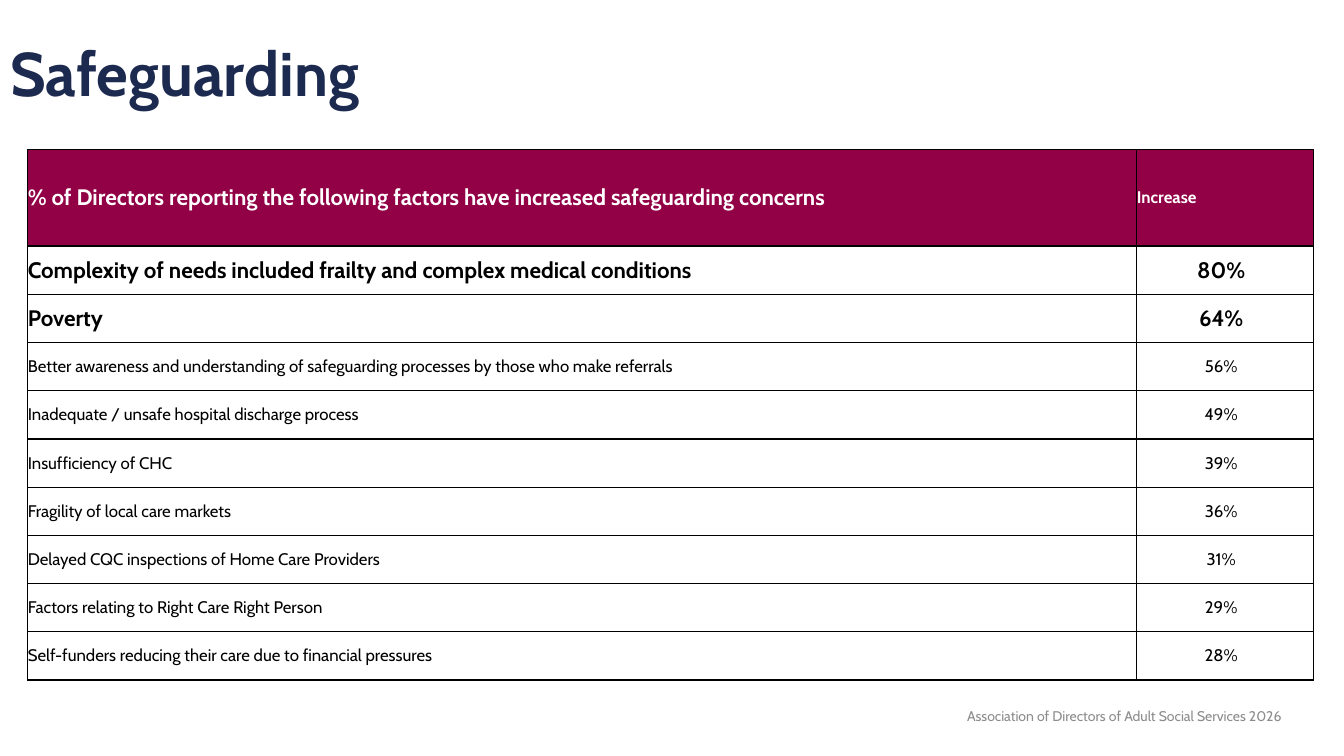
from lxml import etree
from pptx import Presentation
from pptx import util as u
from pptx.dml.color import RGBColor
from pptx.enum import text
from pptx.oxml import ns

NAVY = RGBColor(0x1D, 0x2A, 0x50)
BURGUNDY = RGBColor(0x92, 0x01, 0x46)
GREY = RGBColor(0x8C, 0x8C, 0x8C)
WHITE = RGBColor(255, 255, 255)
BLACK = RGBColor(0, 0, 0)

ROWS = [
    ("% of Directors reporting the following factors have increased safeguarding concerns", "Increase"),
    ("Complexity of needs included frailty and complex medical conditions", "80%"),
    ("Poverty", "64%"),
    ("Better awareness and understanding of safeguarding processes by those who make referrals", "56%"),
    ("Inadequate / unsafe hospital discharge process", "49%"),
    ("Insufficiency of CHC", "39%"),
    ("Fragility of local care markets", "36%"),
    ("Delayed CQC inspections of Home Care Providers", "31%"),
    ("Factors relating to Right Care Right Person", "29%"),
    ("Self-funders reducing their care due to financial pressures", "28%"),
]


def write(frame, words, size, color, bold=False, align=text.PP_ALIGN.LEFT):
    frame.text = words
    frame.word_wrap = True
    para = frame.paragraphs[0]
    para.alignment = align
    para.font.name = "Cabin"
    para.font.size = u.Pt(size)
    para.font.bold = bold
    para.font.color.rgb = color
    return para


def add_borders(cell):
    properties = cell._tc.get_or_add_tcPr()
    for side in ("a:lnL", "a:lnR", "a:lnT", "a:lnB"):
        line = etree.SubElement(properties, ns.qn(side), w=str(u.Pt(1)))
        fill = etree.SubElement(line, ns.qn("a:solidFill"))
        etree.SubElement(fill, ns.qn("a:srgbClr"), val=str(BLACK))


deck = Presentation()
deck.slide_width, deck.slide_height = u.Cm(33.87), u.Cm(19.05)
page = deck.slides.add_slide(deck.slide_layouts[5])

# Title
title = page.shapes.title
title.left, title.top, title.width, title.height = u.Cm(0), u.Cm(0.08), u.Cm(29.21), u.Cm(3.68)
title.text_frame.vertical_anchor = text.MSO_ANCHOR.MIDDLE
write(title.text_frame, "Safeguarding", 44, NAVY, True).line_spacing = 0.9

# Footer
footer = page.shapes.add_textbox(u.Cm(21.11), u.Cm(17.53), u.Cm(11.43), u.Cm(1.02))
footer.text_frame.vertical_anchor = text.MSO_ANCHOR.MIDDLE
write(footer.text_frame, "Association of Directors of Adult Social Services 2026", 10, GREY,
      align=text.PP_ALIGN.RIGHT)

# Table of factors
table = page.shapes.add_table(len(ROWS), 2, u.Cm(0.7), u.Cm(3.77), u.Cm(32.4), u.Cm(13.37)).table
table.columns[0].width, table.columns[1].width = u.Cm(27.95), u.Cm(4.45)
for r, row in enumerate(ROWS):
    header = r == 0
    table.rows[r].height = u.Cm(2.43 if header else 1.215)
    for c, words in enumerate(row):
        cell = table.cell(r, c)
        add_borders(cell)
        cell.fill.solid()
        cell.fill.fore_color.rgb = BURGUNDY if header else WHITE
        cell.vertical_anchor = text.MSO_ANCHOR.MIDDLE
        cell.margin_left = cell.margin_top = cell.margin_bottom = 0
        cell.margin_right = u.Cm(0 if header else 0.2)
        # The header and the two leading factors stand out
        size = 16 if r < 3 and words != "Increase" else 12
        centred = c == 1 and not header
        write(cell.text_frame, words, size, WHITE if header else BLACK, r < 3,
              text.PP_ALIGN.CENTER if centred else text.PP_ALIGN.LEFT)

deck.save("out.pptx")
